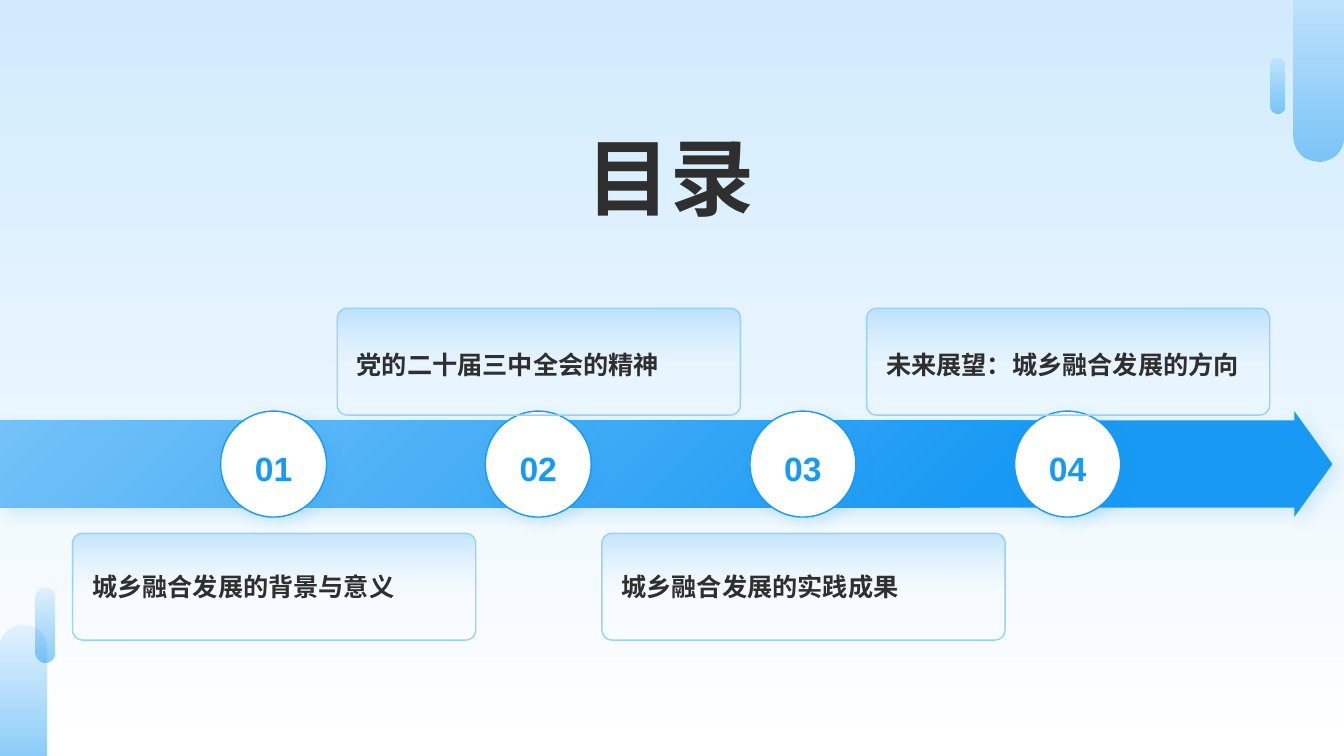
from lxml import etree
from pptx import Presentation
from pptx.dml.color import RGBColor
from pptx.enum.shapes import MSO_SHAPE as SHAPE
from pptx.enum.text import MSO_ANCHOR as ANCHOR, MSO_AUTO_SIZE as AUTOSIZE, PP_ALIGN as ALIGN
from pptx.oxml.ns import qn
from pptx.util import Cm, Pt

# Content
TITLE = "目录"
CHAPTERS = [
    "城乡融合发展的背景与意义",
    "党的二十届三中全会的精神",
    "城乡融合发展的实践成果",
    "未来展望：城乡融合发展的方向",
]

# Colours and gradients: stops of (position %, colour, opacity %)
BLUE, PALE, DARK, WHITE = "1799F4", "97D1FA", "2F2F2F", "FFFFFF"
PAGE_STOPS = [(0, "D1EBFD", 100), (100, WHITE, 100)]
PILL_STOPS = [(0, BLUE, 10), (100, BLUE, 50)]
ARROW_STOPS = [(25, BLUE, 100), (100, "74C2F8", 100)]
CARD_STOPS = [(50, "B9E0FC", 0), (100, PALE, 50)]

# Corner decorations in cm: left, top, width, height, top and bottom rounding
PILLS = [
    (32.61, 0, 1.25, 4.06, 0, 0.5),
    (0, 15.73, 1.18, 3.32, 0.5, 0),
    (32.03, 1.45, 0.34, 1.4, 0.5, 0.5),
    (0.89, 14.81, 0.49, 1.88, 0.5, 0.5),
]

# Timeline layout in cm
BAND_TOP, BAND_H = 10.36, 2.67
FIRST_LEFT, STEP = 5.56, 6.67
CARD_W, CARD_H, CARD_SHIFT = 10.16, 2.69, -3.73
LOWER, UPPER = (13.44, 0.38), (7.77, 0.46)  # card top, label offset


def rgb(color):
    return RGBColor.from_string(color)


def add_color(parent, color, opacity):
    clr = etree.SubElement(parent, qn("a:srgbClr"), val=color)
    if opacity < 100:
        etree.SubElement(clr, qn("a:alpha"), val=str(opacity * 1000))


def set_gradient(fill, owner, stops, angle):
    fill.gradient()
    grad = next(owner.iter(qn("a:gradFill")))
    for child in list(grad):
        grad.remove(child)
    gs_list = etree.SubElement(grad, qn("a:gsLst"))
    for position, color, opacity in stops:
        gs = etree.SubElement(gs_list, qn("a:gs"), pos=str(position * 1000))
        add_color(gs, color, opacity)
    etree.SubElement(grad, qn("a:lin"), ang=str(angle * 60000), scaled="0")


def add_shape(kind, box, adjustments=(), line=None):
    sp = s.shapes.add_shape(kind, *map(Cm, box))
    for i, value in enumerate(adjustments):
        sp.adjustments[i] = value
    if line:
        sp.line.color.rgb = rgb(line)
        sp.line.width = Pt(1)
    else:
        sp.line.fill.background()
    sp.shadow.inherit = False
    return sp


def add_glow(sp):
    effects = next(sp.element.iter(qn("a:effectLst")))
    shadow = etree.SubElement(
        effects, qn("a:outerShdw"), blurRad=str(Pt(10)), dist=str(Pt(5)),
        dir=str(45 * 60000), algn="tl", rotWithShape="0")
    add_color(shadow, BLUE, 15)


def write(tf, text, size, color, align, anchor):
    tf.auto_size = AUTOSIZE.NONE
    tf.vertical_anchor = anchor
    p = tf.paragraphs[0]
    p.text = text
    p.alignment = align
    p.font.name, p.font.size, p.font.bold = "Arial", Pt(size), True
    p.font.color.rgb = rgb(color)
    return p


prs = Presentation()
prs.slide_width, prs.slide_height = Cm(33.87), Cm(19.05)
s = prs.slides.add_slide(prs.slide_layouts[5])
set_gradient(s.background.fill, s.element, PAGE_STOPS, 90)

# Corner decorations
for *box, top_round, bottom_round in PILLS:
    sp = add_shape(SHAPE.ROUND_2_SAME_RECTANGLE, box, (top_round, bottom_round))
    set_gradient(sp.fill, sp.element, PILL_STOPS, 90)

# Timeline arrow
arrow = add_shape(SHAPE.RIGHT_ARROW, (0, BAND_TOP, 33.58, BAND_H), (0.824, 0.36))
set_gradient(arrow.fill, arrow.element, ARROW_STOPS, 225)
add_glow(arrow)

# Chapters: numbered circle, then card and label, alternating below and above
for i, chapter in enumerate(CHAPTERS):
    left = FIRST_LEFT + i * STEP
    circle = add_shape(SHAPE.OVAL, (left, BAND_TOP, BAND_H, BAND_H), line=BLUE)
    circle.fill.solid()
    circle.fill.fore_color.rgb = rgb(WHITE)
    add_glow(circle)
    circle.text_frame.word_wrap = False
    p = write(circle.text_frame, f"{i + 1:02}", 24, BLUE, ALIGN.CENTER, ANCHOR.MIDDLE)
    p.line_spacing = 1.2

    card_left = left + CARD_SHIFT
    card_top, label_offset = UPPER if i % 2 else LOWER
    card = add_shape(SHAPE.ROUNDED_RECTANGLE,
                     (card_left, card_top, CARD_W, CARD_H), (0.095,), PALE)
    set_gradient(card.fill, card.element, CARD_STOPS, 270)
    label = s.shapes.add_textbox(Cm(card_left + 0.24), Cm(card_top + label_offset),
                                 Cm(9.68), Cm(1.47))
    label.text_frame.word_wrap = True
    write(label.text_frame, chapter, 18, DARK, ALIGN.LEFT, ANCHOR.BOTTOM)

# Title
title = s.shapes.title
title.left, title.top, title.width, title.height = map(Cm, (1.83, 3.15, 30.15, 2.54))
write(title.text_frame, TITLE, 60, DARK, ALIGN.CENTER, ANCHOR.MIDDLE)

prs.save("out.pptx")
